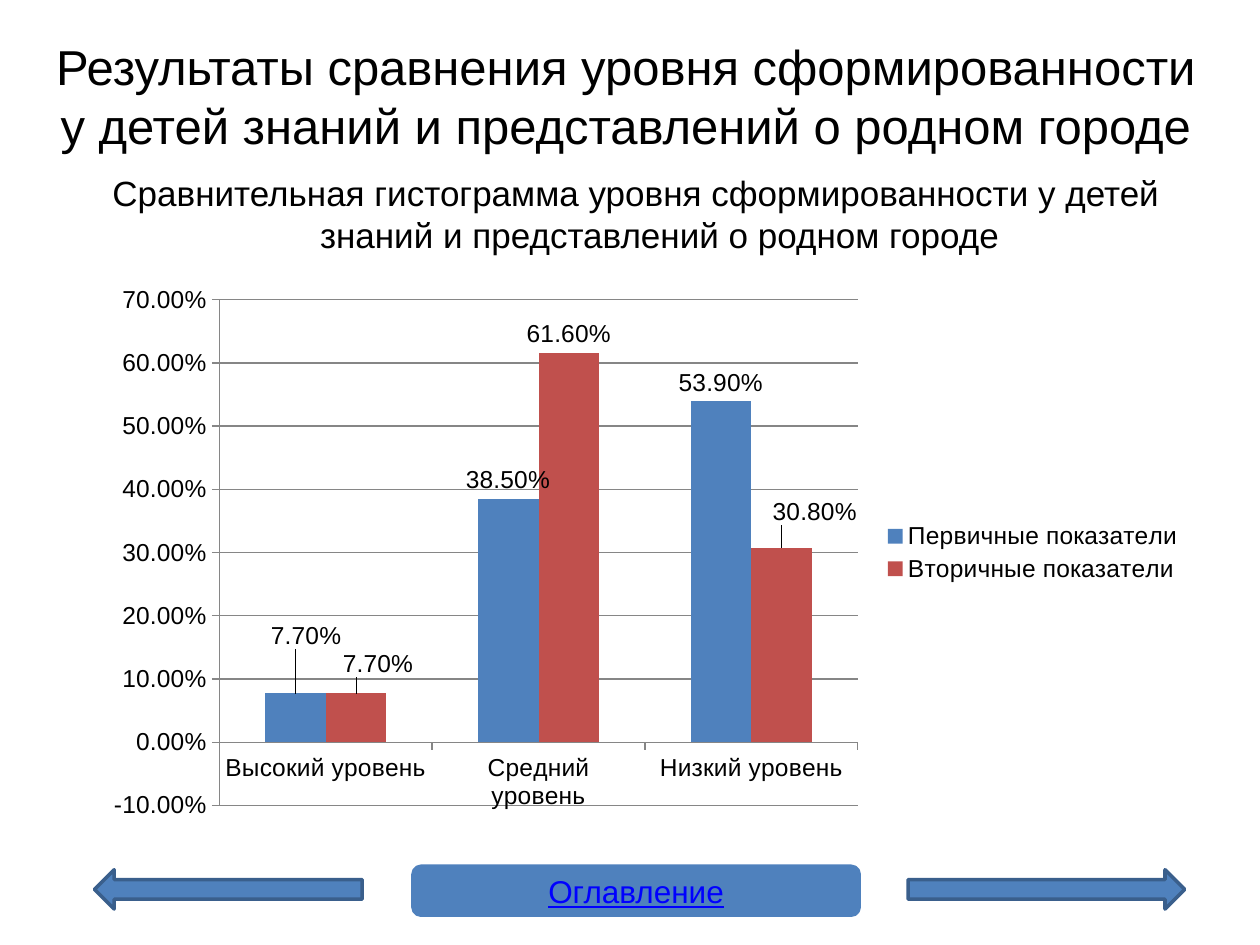
from lxml.etree import SubElement
from pptx import Presentation
from pptx.chart.data import CategoryChartData
from pptx.dml.color import RGBColor
from pptx.enum.chart import XL_CHART_TYPE, XL_LABEL_POSITION, XL_LEGEND_POSITION, XL_TICK_MARK
from pptx.enum.shapes import MSO_SHAPE
from pptx.enum.text import MSO_ANCHOR, PP_ALIGN
from pptx.oxml import parse_xml
from pptx.oxml.ns import nsdecls, qn
from pptx.util import Pt

COLORS = {"text": "000000", "primary": "4F81BD", "secondary": "C0504D",
          "edge": "3A5F8C", "link": "0000FF", "grid": "868686"}
FONT = "Arial"
PERCENT = "0.00%"
TITLE = "Результаты сравнения уровня сформированности у детей знаний и представлений о родном городе"
SUBTITLE = "Сравнительная гистограмма уровня сформированности у детей знаний и представлений о родном городе"
LEVELS = ["Высокий уровень", "Средний уровень", "Низкий уровень"]
SERIES = [
    ("Первичные показатели", [0.077, 0.385, 0.539], "primary", {0: (0.01, -0.07)}),
    ("Вторичные показатели", [0.077, 0.616, 0.308], "secondary",
     {0: (0.02, -0.02), 2: (0.03, -0.03)}),
]


def rgb(name):
    return RGBColor.from_string(COLORS[name])


def style_font(font, size, color="text"):
    font.name = FONT
    font.size = Pt(size)
    font.color.rgb = rgb(color)


def place(sp, box):
    sp.left, sp.top, sp.width, sp.height = (Pt(v) for v in box)


def write(sp, text, size, color="text", anchor=MSO_ANCHOR.MIDDLE):
    tf = sp.text_frame
    tf.word_wrap = True
    tf.vertical_anchor = anchor
    p = tf.paragraphs[0]
    p.alignment = PP_ALIGN.CENTER
    r = p.add_run()
    r.text = text
    style_font(r.font, size, color)
    return p, r


def add_heading(s, title_box, body_box):
    title, body = s.shapes.title, s.placeholders[1]
    place(title, title_box)
    write(title, TITLE, 28)
    place(body, body_box)
    p, r = write(body, SUBTITLE, 20, anchor=MSO_ANCHOR.TOP)
    p.space_before = Pt(4)
    pPr = p._p.get_or_add_pPr()
    pPr.set("marL", str(Pt(27)))
    pPr.set("indent", str(Pt(-27)))
    SubElement(pPr, qn("a:buNone"))


def format_axis(axis):
    axis.major_tick_mark = XL_TICK_MARK.OUTSIDE
    axis.minor_tick_mark = XL_TICK_MARK.NONE
    axis.format.line.color.rgb = rgb("grid")
    style_font(axis.tick_labels.font, 14)


def shift_label(series, index, dx, dy):
    label = series.points[index].data_label
    style_font(label.font, 14)
    label.position = XL_LABEL_POSITION.OUTSIDE_END
    idx = series._element.xpath(f"c:dLbls/c:dLbl/c:idx[@val='{index}']")[0]
    idx.addnext(parse_xml(
        f'<c:layout {nsdecls("c")}><c:manualLayout>'
        f'<c:x val="{dx}"/><c:y val="{dy}"/></c:manualLayout></c:layout>'))


def add_histogram(s, box):
    data = CategoryChartData(number_format=PERCENT)
    data.categories = LEVELS
    for name, values, color, shifts in SERIES:
        data.add_series(name, values)
    frame = s.shapes.add_chart(XL_CHART_TYPE.COLUMN_CLUSTERED, *(Pt(v) for v in box), data)
    chart = frame.chart
    chart.has_title = False
    style_font(chart.font, 14)
    chart.has_legend = True
    chart.legend.position = XL_LEGEND_POSITION.RIGHT
    chart.legend.include_in_layout = False
    style_font(chart.legend.font, 14)

    format_axis(chart.category_axis)
    axis = chart.value_axis
    format_axis(axis)
    axis.minimum_scale, axis.maximum_scale, axis.major_unit = -0.1, 0.7, 0.1
    axis.tick_labels.number_format = PERCENT
    axis.tick_labels.number_format_is_linked = False
    axis.has_major_gridlines = True
    axis.major_gridlines.format.line.color.rgb = rgb("grid")

    plot = chart.plots[0]
    plot.gap_width, plot.overlap = 150, 0
    plot.vary_by_categories = False
    for series, (name, values, color, shifts) in zip(plot.series, SERIES):
        series.format.fill.solid()
        series.format.fill.fore_color.rgb = rgb(color)
        labels = series.data_labels
        labels.show_value = True
        labels.number_format = PERCENT
        labels.number_format_is_linked = False
        labels.position = XL_LABEL_POSITION.OUTSIDE_END
        style_font(labels.font, 14)
        for index, (dx, dy) in shifts.items():
            shift_label(series, index, dx, dy)


def add_filled_shape(s, kind, box, line):
    sp = s.shapes.add_shape(kind, *(Pt(v) for v in box))
    sp.shadow.inherit = False
    sp.fill.solid()
    sp.fill.fore_color.rgb = rgb("primary")
    sp.line.color.rgb = rgb(line)
    sp.line.width = Pt(2)
    return sp


def add_navigation(s, left, top, width):
    button = add_filled_shape(s, MSO_SHAPE.ROUNDED_RECTANGLE,
                              (left + 182, top, 255, 28), "primary")
    p, r = write(button, "Оглавление", 18, "link")
    r.font.underline = True
    add_filled_shape(s, MSO_SHAPE.LEFT_ARROW, (left, top + 2, 153, 22.5), "edge")
    add_filled_shape(s, MSO_SHAPE.RIGHT_ARROW,
                     (left + width - 158, top + 2, 158, 22.5), "edge")


def main():
    prs = Presentation()
    prs.slide_width, prs.slide_height = Pt(720), Pt(540)
    s = prs.slides.add_slide(prs.slide_layouts[1])
    add_heading(s, (14.5, 9.5, 686, 90), (39.5, 94.5, 648, 356))
    add_histogram(s, (52.5, 157, 631, 317.5))
    add_navigation(s, 54, 495, 623)
    prs.save("out.pptx")


if __name__ == "__main__":
    main()
